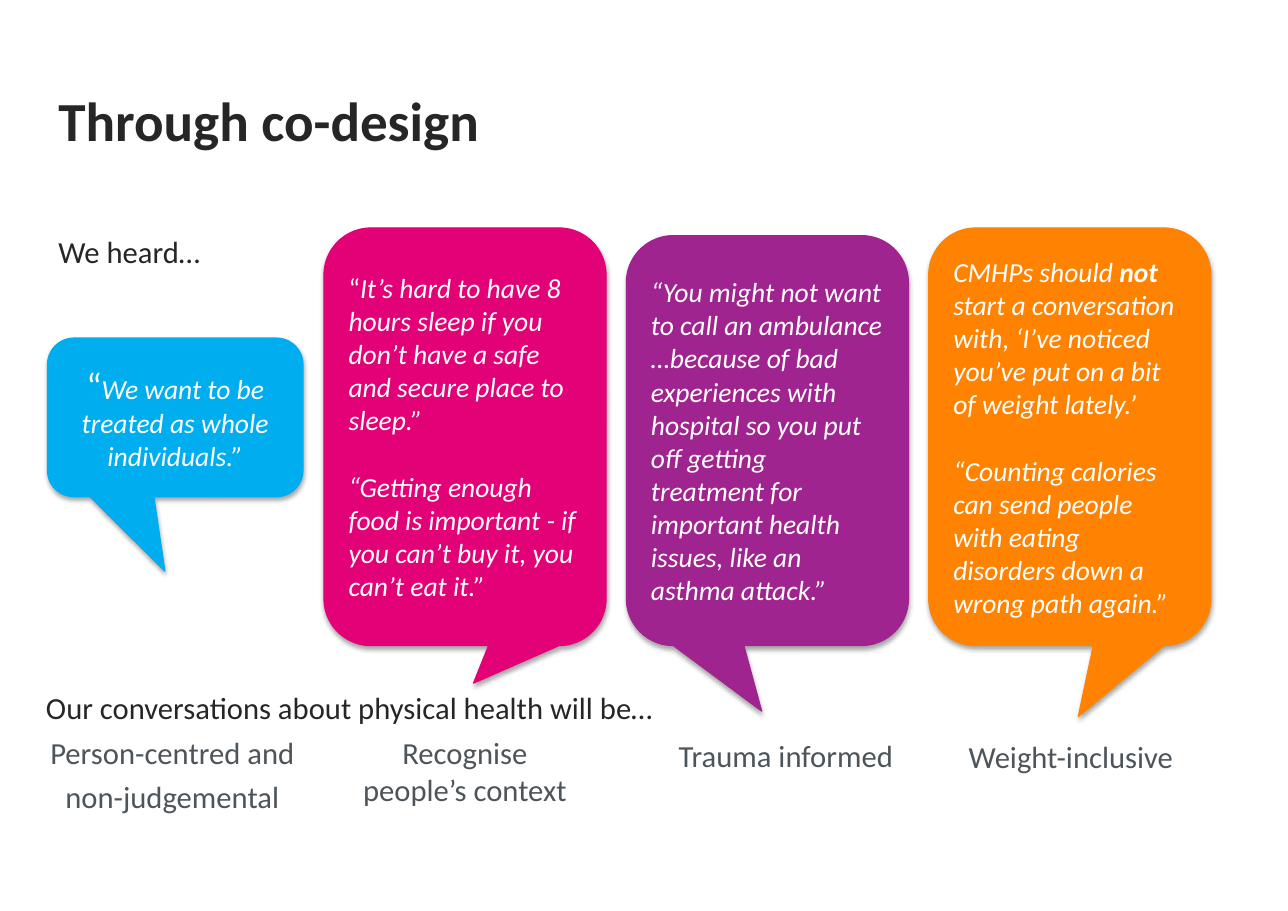
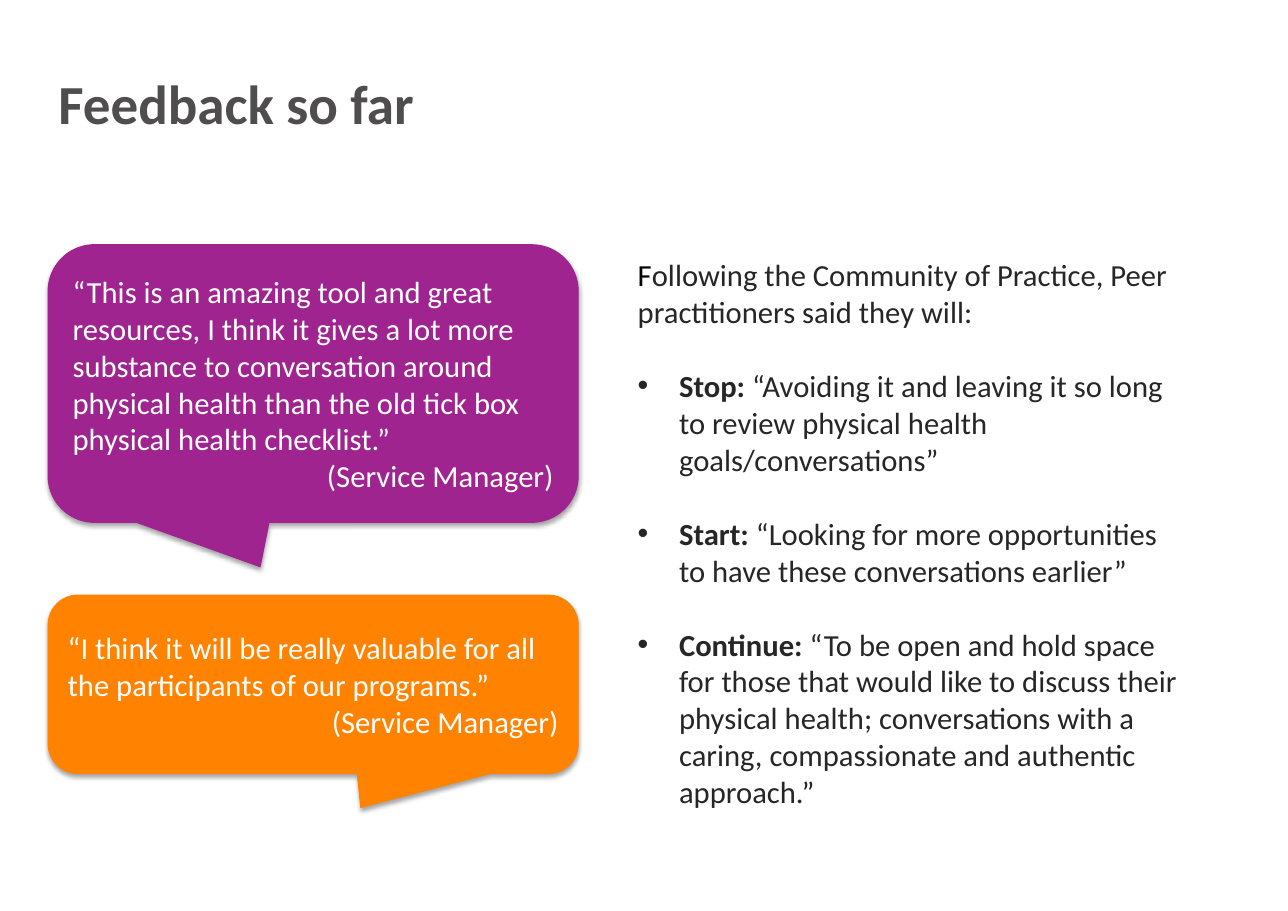
from dataclasses import dataclass
from typing import NamedTuple

from lxml.etree import SubElement
from pptx import Presentation
from pptx.dml.color import RGBColor
from pptx.enum.shapes import MSO_SHAPE
from pptx.enum.text import MSO_ANCHOR, MSO_AUTO_SIZE, PP_ALIGN
from pptx.oxml.ns import qn
from pptx.util import Pt

FONT = "Calibri"
BLUE = RGBColor(0x00, 0xAE, 0xEF)
PINK = RGBColor(0xE2, 0x01, 0x77)
PURPLE = RGBColor(0x9F, 0x24, 0x8F)
ORANGE = RGBColor(0xFF, 0x82, 0x00)
WHITE = RGBColor(0xFF, 0xFF, 0xFF)
BLACK = RGBColor(0x00, 0x00, 0x00)
INK = RGBColor(0x26, 0x26, 0x26)
GREY = RGBColor(0x4F, 0x4D, 0x4E)
SLATE = RGBColor(0x4D, 0x55, 0x5B)
LEFT, MID, RIGHT = PP_ALIGN.LEFT, PP_ALIGN.CENTER, PP_ALIGN.RIGHT


class Run(NamedTuple):
    """Text with its own style; an unset size or colour comes from the box."""
    text: str
    bold: bool = False
    slant: bool = False
    size: float = None
    color: RGBColor = None


@dataclass
class Para:
    """A paragraph of runs."""
    runs: list
    align: PP_ALIGN = LEFT
    before: float = 0
    bullet: bool = False


def plain(text, **style):
    """Return a paragraph with one upright run."""
    return Para([Run(text)], **style)


def slant(text, **style):
    """Return a paragraph with one italic run."""
    return Para([Run(text, slant=True)], **style)


def point(lead, text):
    """Return a bulleted paragraph with a bold lead."""
    return Para([Run(lead, bold=True), Run(text)], before=24.4, bullet=True)


def mark(para):
    """Give a paragraph a hanging round bullet."""
    props = para._p.get_or_add_pPr()
    props.set("marL", str(Pt(27)))
    props.set("indent", str(-Pt(27)))
    SubElement(props, qn("a:buFont"), typeface="Arial")
    SubElement(props, qn("a:buChar"), char="•")


def write(frame, paras, size, color):
    """Fill a text frame, run by run."""
    frame.word_wrap = True
    frame.auto_size = MSO_AUTO_SIZE.NONE
    for i, item in enumerate(paras):
        para = frame.add_paragraph() if i else frame.paragraphs[0]
        if item.bullet:
            mark(para)
        para.alignment = item.align
        para.space_before = Pt(item.before)
        for part in item.runs:
            run = para.add_run()
            run.text = part.text
            font = run.font
            font.name = FONT
            font.size = Pt(part.size or size)
            font.bold = part.bold
            font.italic = part.slant
            font.color.rgb = part.color or color


def start(deck, title, top, color):
    """Add a slide with its title and return it."""
    slide = deck.slides.add_slide(deck.slide_layouts[5])
    shape = slide.shapes.title
    shape.left, shape.top, shape.width, shape.height = map(Pt, (31, top, 600, 64))
    shape.text_frame.vertical_anchor = MSO_ANCHOR.TOP
    write(shape.text_frame, [Para([Run(title, bold=True)])], 36, color)
    return slide


def label(slide, box, paras, color):
    """Add a text box."""
    shape = slide.shapes.add_textbox(*map(Pt, box))
    write(shape.text_frame, paras, 20, color)


def shade(shape):
    """Give a shape a soft shadow below it."""
    shape.shadow.inherit = False
    effects = shape._element.spPr.find(qn("a:effectLst"))
    drop = SubElement(effects, qn("a:outerShdw"), blurRad=str(Pt(3.1)),
                      dist=str(Pt(1.8)), dir="5400000", rotWithShape="0")
    tint = SubElement(drop, qn("a:srgbClr"), val="000000")
    SubElement(tint, qn("a:alpha"), val="35000")


def bubble(slide, box, tip, color, paras, size):
    """Add a speech bubble whose tail ends at tip, in shares of its size."""
    shape = slide.shapes.add_shape(MSO_SHAPE.ROUNDED_RECTANGULAR_CALLOUT, *map(Pt, box))
    shape.adjustments[0], shape.adjustments[1] = tip
    shape.fill.solid()
    shape.fill.fore_color.rgb = color
    shape.line.color.rgb = color
    shape.line.width = Pt(0.75)
    shade(shape)
    shape.text_frame.vertical_anchor = MSO_ANCHOR.MIDDLE
    write(shape.text_frame, paras, size, WHITE)


def design(deck):
    """Build the co-design slide."""
    slide = start(deck, "Through co-design", 52.6, INK)
    bubble(slide, (31, 221, 167, 103.7), (-0.04, 0.97), BLUE, [
        Para([Run("“", size=24),
              Run("We want to be treated as whole individuals.”", slant=True)], MID)], 18)
    quotes = [
        (149, (0.03, 0.59), PINK, [
            Para([Run("“"), Run("It’s hard to have 8 hours sleep if you don’t have a safe "
                                "and secure place to sleep.”", slant=True)]),
            slant("“Getting enough food is important - if you can’t buy it, "
                  "you can’t eat it.”", before=22)]),
        (154, (-0.02, 0.66), PURPLE, [
            slant("“You might not want to call an ambulance …because of bad experiences "
                  "with hospital so you put off getting treatment for important health "
                  "issues, like an asthma attack.”")]),
        (149, (0.03, 0.67), ORANGE, [
            Para([Run("CMHPs should ", slant=True), Run("not ", bold=True, slant=True),
                  Run("start a conversation with, ‘I’ve noticed you’ve put on a bit of "
                      "weight lately.’", slant=True)]),
            slant("“Counting calories can send people with eating disorders down a "
                  "wrong path again.”", before=22)]),
    ]
    for i, (top, tip, color, paras) in enumerate(quotes):
        box = (211.7 + 197.6 * i, top, 184.4, 422 - top)
        bubble(slide, box, tip, color, paras, 18)

    label(slide, (31, 149, 137, 32), [plain("We heard…")], INK)
    label(slide, (23, 447, 426, 32),
          [plain("Our conversations about physical health will be…")], INK)
    themes = [
        (21.6, 476, 182, [plain("Person-centred and", align=MID),
                          plain("non-judgemental", align=MID, before=5)]),
        (226.8, 476, 154, [plain("Recognise people’s context", align=MID)]),
        (434, 478, 159, [plain("Trauma informed", align=MID)]),
        (620.6, 478.8, 158.4, [plain("Weight-inclusive", align=MID)]),
    ]
    for left, top, width, paras in themes:
        label(slide, (left, top, width, 62), paras, SLATE)


def review(deck):
    """Build the feedback slide."""
    slide = start(deck, "Feedback so far", 41.8, GREY)
    label(slide, (409.7, 164, 369.4, 371), [
        Para([Run("F", color=BLACK),
              Run("ollowing the Community of Practice, Peer practitioners said they will:")]),
        point("Stop: ", "“Avoiding it and leaving it so long to review physical health "
                        "goals/conversations”"),
        point("Start: ", "“Looking for more opportunities to have these conversations "
                         "earlier”"),
        point("Continue: ", "“To be open and hold space for those that would like to "
                            "discuss their physical health; conversations with a caring, "
                            "compassionate and authentic approach.”"),
    ], INK)
    quotes = [
        (160, 181.4, (-0.1, 0.66), PURPLE,
         "“This is an amazing tool and great resources, I think it gives a lot more "
         "substance to conversation around physical health than the old tick box "
         "physical health checklist.”"),
        (389, 116.6, (0.09, 0.69), ORANGE,
         "“I think it will be really valuable for all the participants of our programs.”"),
    ]
    for top, height, tip, color, text in quotes:
        paras = [plain(text), plain("(Service Manager)", align=RIGHT)]
        bubble(slide, (31.5, top, 346.3, height), tip, color, paras, 20)


def main():
    """Build and save the deck."""
    deck = Presentation()
    deck.slide_width, deck.slide_height = Pt(841.68), Pt(595.44)
    design(deck)
    review(deck)
    deck.save("out.pptx")


if __name__ == "__main__":
    main()
